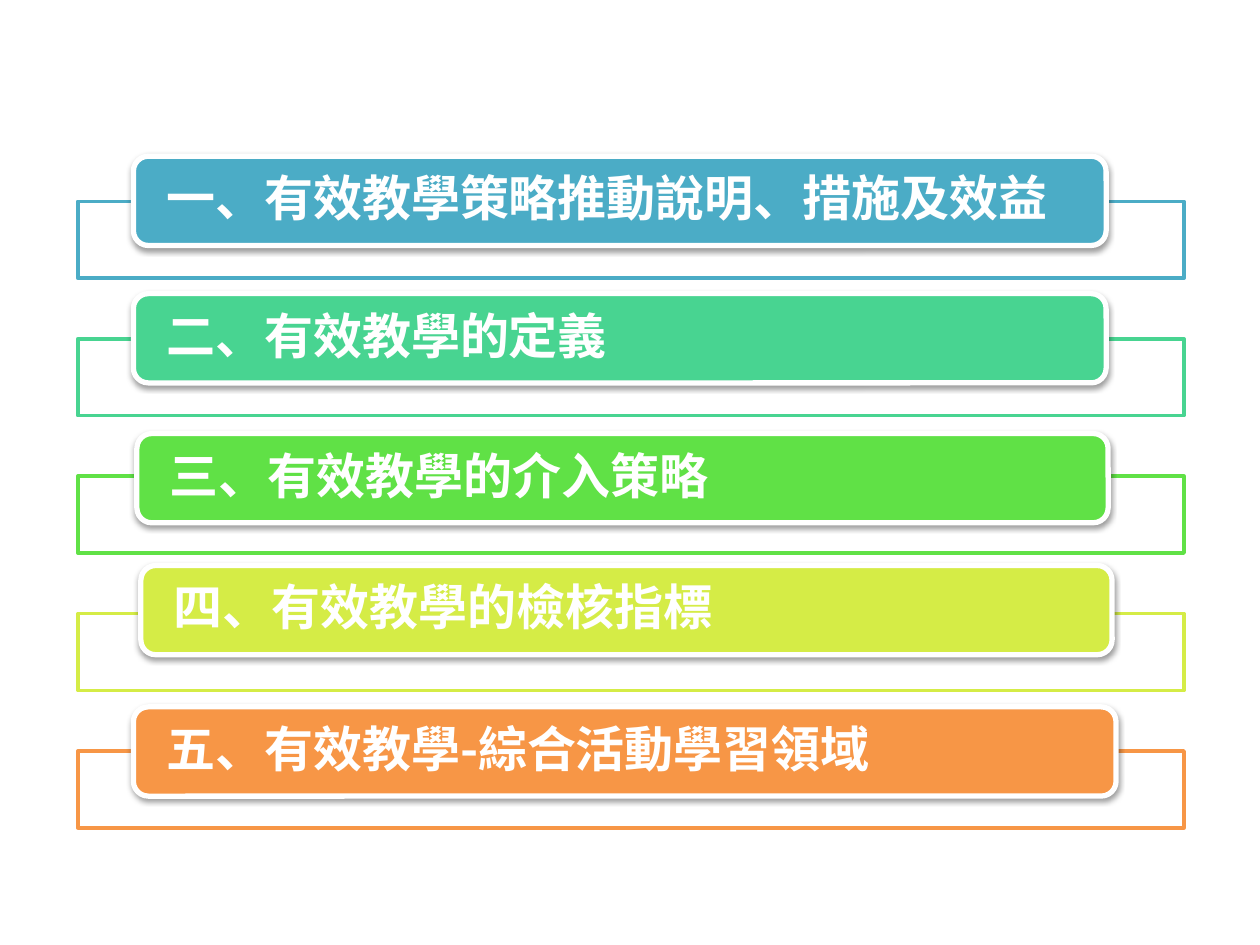
from lxml import etree
from pptx import Presentation
from pptx.dml.color import RGBColor
from pptx.enum.shapes import MSO_SHAPE
from pptx.enum.text import MSO_ANCHOR, PP_ALIGN
from pptx.oxml import parse_xml
from pptx.oxml.ns import qn
from pptx.util import Cm, Pt

RECTANGLE = MSO_SHAPE.RECTANGLE
ROUNDED = MSO_SHAPE.ROUNDED_RECTANGLE
MIDDLE = MSO_ANCHOR.MIDDLE
LEFT = PP_ALIGN.LEFT

FONT = "Noto Sans CJK SC"
WHITE = RGBColor(0xFF, 0xFF, 0xFF)
BLUE = RGBColor(0x4B, 0xAC, 0xC6)
TEAL = RGBColor(0x48, 0xD4, 0x91)
GREEN = RGBColor(0x60, 0xE1, 0x46)
LIME = RGBColor(0xD5, 0xEC, 0x46)
ORANGE = RGBColor(0xF7, 0x96, 0x46)

FRAME_LEFT, FRAME_TOP = 1.57, 4.06
FRAME_WIDTH, FRAME_HEIGHT = 22.3, 1.55
ROW_PITCH = 2.77
LABEL_HEIGHT = 1.8

# Title, colour, label's indent from the frame, its rise above it, its width (cm)
TOPICS = [
    ("一、有效教學策略推動說明、措施及效益", BLUE, 1.12, 0.91, 19.61),
    ("二、有效教學的定義", TEAL, 1.12, 0.91, 19.61),
    ("三、有效教學的介入策略", GREEN, 1.19, 0.86, 19.58),
    ("四、有效教學的檢核指標", LIME, 1.27, 0.97, 19.58),
    ("五、有效教學-綜合活動學習領域", ORANGE, 1.12, 0.89, 19.81),
]

SHADOW = (
    '<a:effectLst xmlns:a="http://schemas.openxmlformats.org/drawingml/2006/main">'
    '<a:outerShdw blurRad="40000" dist="20000" dir="5400000" rotWithShape="0">'
    '<a:srgbClr val="000000"><a:alpha val="38000"/></a:srgbClr>'
    "</a:outerShdw></a:effectLst>"
)


def add_box(page, preset, left, top, width, height, fill, line, line_width):
    box = page.shapes.add_shape(preset, Cm(left), Cm(top), Cm(width), Cm(height))
    box.shadow.inherit = False
    box.fill.solid()
    box.fill.fore_color.rgb = fill
    box.line.color.rgb = line
    box.line.width = Pt(line_width)
    return box


def set_opacity(box, percent):
    color = box.fill._xPr.find(qn("a:solidFill"))[0]
    etree.SubElement(color, qn("a:alpha")).set("val", str(percent * 1000))


def add_soft_shadow(box):
    properties = box._element.spPr
    properties.replace(properties.find(qn("a:effectLst")), parse_xml(SHADOW))


def write_text(box, text, size, color, bold, inset):
    frame = box.text_frame
    frame.word_wrap = True
    frame.vertical_anchor = MIDDLE
    frame.margin_left = frame.margin_right = Cm(inset)
    frame.margin_top = frame.margin_bottom = 0
    para = frame.paragraphs[0]
    para.alignment = LEFT
    para.line_spacing = 0.9
    span = para.add_run()
    span.text = text
    span.font.name = FONT
    span.font.size = Pt(size)
    span.font.bold = bold
    span.font.color.rgb = color
    east_asian = etree.SubElement(span.font._element, qn("a:ea"))
    east_asian.set("typeface", FONT)


def add_topic(page, left, top, title, color, indent, rise, label_width):
    """Place an outlined frame with a coloured label across its top edge."""
    frame = add_box(page, RECTANGLE, left, top, FRAME_WIDTH, FRAME_HEIGHT,
                    WHITE, color, 2)
    set_opacity(frame, 90)
    label = add_box(page, ROUNDED, left + indent, top - rise, label_width,
                    LABEL_HEIGHT, color, WHITE, 3)
    add_soft_shadow(label)
    write_text(label, title, size=28, color=WHITE, bold=True, inset=0.58)


def main():
    deck = Presentation()
    deck.slide_width, deck.slide_height = Cm(25.4), Cm(19.05)
    page = deck.slides.add_slide(deck.slide_layouts[6])
    for row, topic in enumerate(TOPICS):
        add_topic(page, FRAME_LEFT, FRAME_TOP + row * ROW_PITCH, *topic)
    deck.save("out.pptx")


if __name__ == "__main__":
    main()
